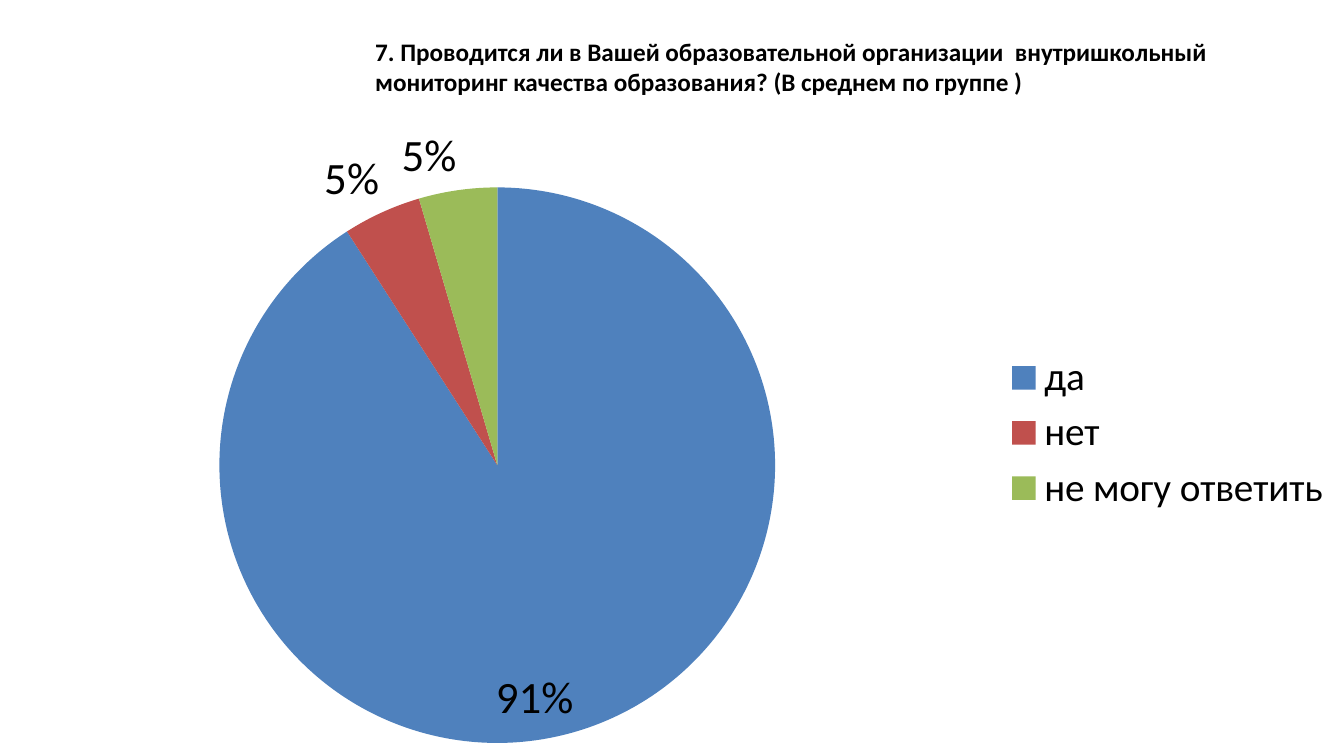
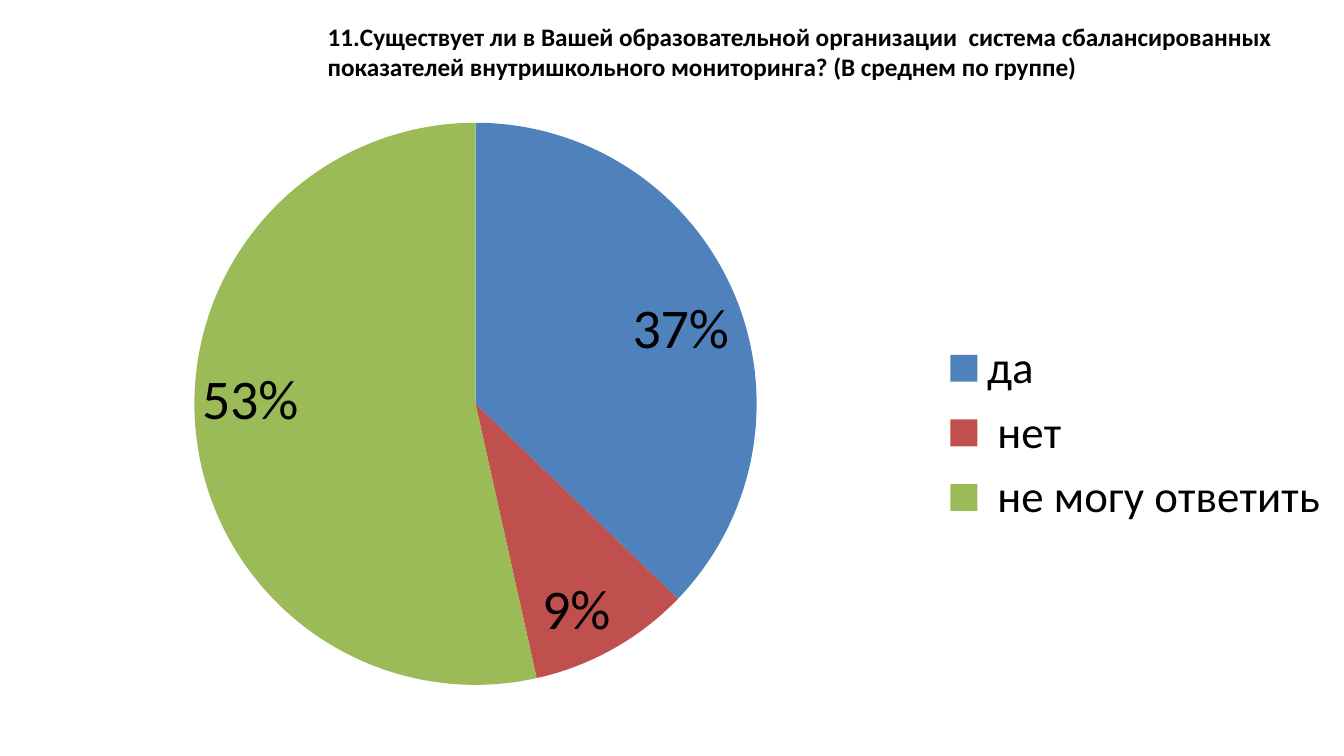
import pptx
import pptx.util
import pptx.dml.color
import pptx.chart.data
import pptx.enum.chart
import pptx.enum.text
from pptx.oxml import parse_xml
from pptx.oxml.ns import nsdecls

Inches = pptx.util.Inches
Pt = pptx.util.Pt
Place = pptx.enum.chart.XL_LABEL_POSITION

FACE, INK = "Calibri", "000000"
HUES = ["4F81BD", "C0504D", "9BBB59"]
IN, OUT = Place.INSIDE_END, Place.OUTSIDE_END

# Boxes are left, top, width, height in inches; "plot" is in shares of the chart.
SLIDES = [
    {
        "title": "7. Проводится ли в Вашей образовательной организации  внутришкольный "
                 "мониторинг качества образования? (В среднем по группе )",
        "head": (3.62, 0.31, 8.83, 1.01),
        "chart": (0, 1.09, 13.33, 6.41),
        "plot": (0.16, 0.12, 0.42, 0.86),
        "answers": [("да", 20, IN), ("нет", 1, OUT), ("не могу ответить", 1, OUT)],
        "sizes": (28, 32),
    },
    {
        "title": "11.Существует ли в Вашей образовательной организации  система "
                 "сбалансированных показателей внутришкольного мониторинга? "
                 "(В среднем по группе)",
        "head": (3.15, 0.16, 9.92, 1.01),
        "chart": (0.18, 1.09, 13.15, 6.41),
        "plot": (0.13, 0.02, 0.43, 0.87),
        "answers": [("да", 16, IN), (" нет", 4, IN), (" не могу ответить", 23, IN)],
        "sizes": (32, 40),
    },
]


def rgb(code):
    return pptx.dml.color.RGBColor.from_string(code)


def style(font, size, bold=False):
    for key, value in {"name": FACE, "size": Pt(size), "bold": bold}.items():
        setattr(font, key, value)
    font.color.rgb = rgb(INK)


def set_plot(chart, box):
    """Fix the inner plot area at the given shares of the chart."""
    area = chart._chartSpace.chart.plotArea
    for old in area.findall("{*}layout"):
        area.remove(old)
    sizes = "".join(f'<c:{tag} val="{val}"/>' for tag, val in zip("xywh", box))
    area.insert(0, parse_xml(
        f'<c:layout {nsdecls("c")}><c:manualLayout><c:layoutTarget val="inner"/>'
        f'<c:xMode val="edge"/><c:yMode val="edge"/>{sizes}'
        '</c:manualLayout></c:layout>'))


def show_share(series):
    """Let each point's own label show its percentage only."""
    for label in series._element.iter("{*}dLbl"):
        for tag, val in (("showVal", "0"), ("showPercent", "1")):
            label.find("{*}" + tag).set("val", val)


def add_title(slide, page):
    title = slide.shapes.title
    title.left, title.top, title.width, title.height = map(Inches, page["head"])
    frame = title.text_frame
    frame.text = page["title"]
    frame.word_wrap = True
    frame.auto_size = pptx.enum.text.MSO_AUTO_SIZE.NONE
    frame.vertical_anchor = pptx.enum.text.MSO_ANCHOR.TOP
    line = frame.paragraphs[0]
    line.alignment = pptx.enum.text.PP_ALIGN.LEFT
    style(line.runs[0].font, 18, True)


def add_pie(slide, page):
    names, counts, places = zip(*page["answers"])
    key_size, label_size = page["sizes"]
    data = pptx.chart.data.CategoryChartData()
    data.categories = names
    data.add_series("Ответы", counts)
    chart = slide.shapes.add_chart(
        pptx.enum.chart.XL_CHART_TYPE.PIE, *map(Inches, page["chart"]), data).chart
    style(chart.font, 10)
    chart.has_title = False
    chart.has_legend = True
    legend = chart.legend
    legend.position = pptx.enum.chart.XL_LEGEND_POSITION.RIGHT
    legend.include_in_layout = False
    style(legend.font, key_size)

    plot = chart.plots[0]
    plot.vary_by_categories = True
    plot.has_data_labels = True
    labels = plot.data_labels
    labels.show_value, labels.show_percentage = False, True
    labels.number_format, labels.number_format_is_linked = "0%", False
    style(labels.font, label_size)

    series = plot.series[0]
    for i, (hue, place) in enumerate(zip(HUES, places)):
        point = series.points[i]
        point.format.fill.solid()
        point.format.fill.fore_color.rgb = rgb(hue)
        style(point.data_label.font, label_size)
        point.data_label.position = place
    show_share(series)
    set_plot(chart, page["plot"])


def main():
    deck = pptx.Presentation()
    deck.slide_width, deck.slide_height = Inches(13.33), Inches(7.5)
    for page in SLIDES:
        slide = deck.slides.add_slide(deck.slide_layouts[5])
        add_title(slide, page)
        add_pie(slide, page)
    deck.save("out.pptx")


if __name__ == "__main__":
    main()
